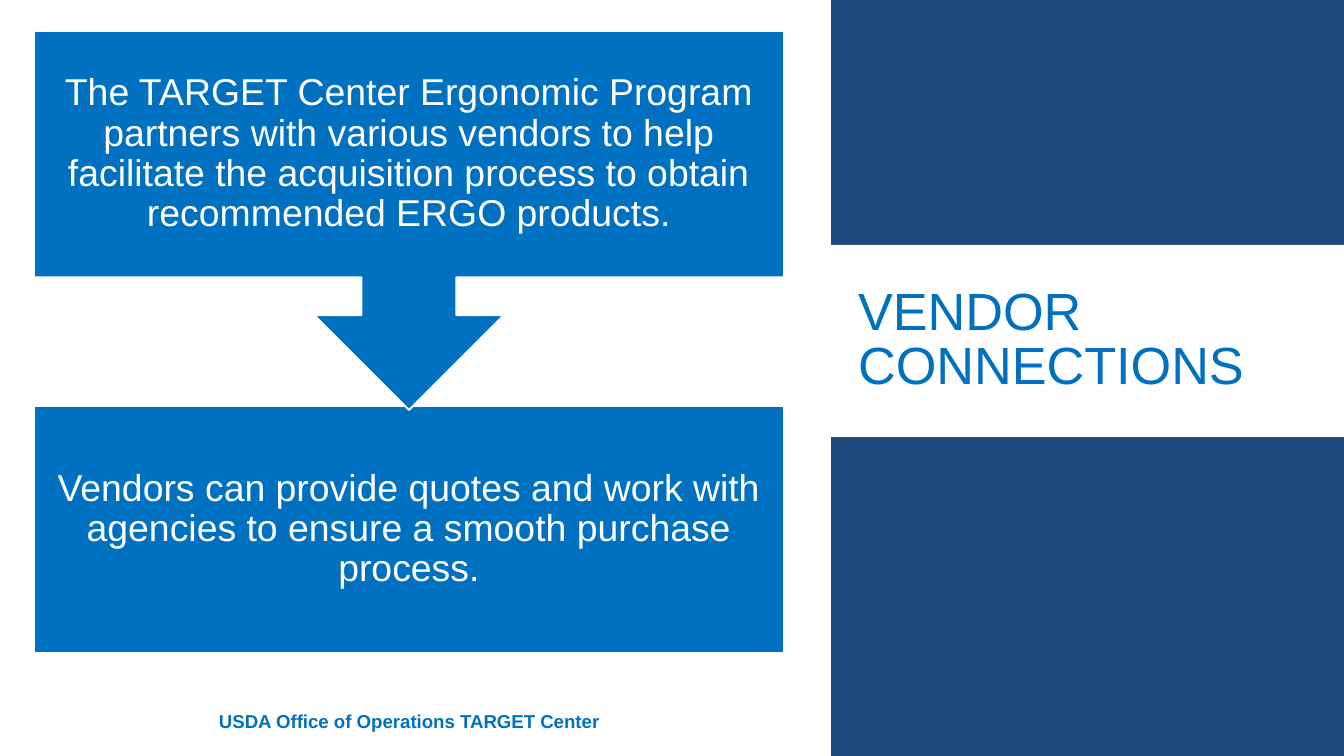
"""Build the vendor connections slide."""
from pptx import Presentation, util as u
from pptx.dml.color import RGBColor
from pptx.enum import shapes, text

THEME = {
    "blue": "0070C0", "navy": "1F497D", "white": "FFFFFF", "font": "Arial",
    "title": 28, "body": 20, "foot": 10,
}
SCALE = 914400 / 134.4
WIDE, HIGH = 1344, 756
SIDE = 831
KIND = shapes.MSO_SHAPE
ALIGN = text.PP_ALIGN

PANELS = [
    ((SIDE, 0, WIDE - SIDE, HIGH), "navy"),
    ((SIDE, 245, WIDE - SIDE, 192), "white"),
]
STEPS = [
    (KIND.RECTANGLE, 406, 247,
     "Vendors can provide quotes and work with agencies to ensure a smooth "
     "purchase process."),
    (KIND.DOWN_ARROW_CALLOUT, 31, 379,
     "The TARGET Center Ergonomic Program partners with various vendors to help "
     "facilitate the acquisition process to obtain recommended ERGO products."),
]
LABELS = [
    ((845, 258, 456, 167), "VENDOR CONNECTIONS",
     {"size": "title", "color": "blue", "align": ALIGN.LEFT, "lead": 0.85}),
    ((116, 703, 586, 40), "USDA Office of Operations TARGET Center",
     {"size": "foot", "color": "blue", "bold": True}),
]


def px(n):
    return u.Emu(round(n * SCALE))


def tint(name):
    return RGBColor.from_string(THEME[name])


def write(shape, words, size, color, bold=False, align=ALIGN.CENTER, lead=0.9, inset=None):
    frame = shape.text_frame
    frame.word_wrap = True
    frame.vertical_anchor = text.MSO_ANCHOR.MIDDLE
    if inset is not None:
        for side in ("left", "top", "right", "bottom"):
            setattr(frame, f"margin_{side}", px(inset))
    para = frame.paragraphs[0]
    para.alignment, para.line_spacing = align, lead
    run = para.add_run()
    run.text = words
    form = {"name": THEME["font"], "size": u.Pt(THEME[size]), "bold": bold}
    for key, value in form.items():
        setattr(run.font, key, value)
    run.font.color.rgb = tint(color)


def block(slide, kind, area, fill, line=None):
    shape = slide.shapes.add_shape(kind, *map(px, area))
    shape.shadow.inherit = False
    shape.fill.solid()
    shape.fill.fore_color.rgb = tint(fill)
    if line:
        shape.line.color.rgb = tint(line)
        shape.line.width = u.Pt(1)
    else:
        shape.line.fill.background()
    return shape


def main():
    deck = Presentation()
    deck.slide_width, deck.slide_height = px(WIDE), px(HIGH)
    slide = deck.slides.add_slide(deck.slide_layouts[6])
    for area, fill in PANELS:
        block(slide, KIND.RECTANGLE, area, fill)
    for kind, top, high, words in STEPS:
        shape = block(slide, kind, (34, top, 750, high), "blue", "white")
        write(shape, words, "body", "white", inset=21)
    for area, words, form in LABELS:
        write(slide.shapes.add_textbox(*map(px, area)), words, **form)
    deck.save("out.pptx")


if __name__ == "__main__":
    main()
